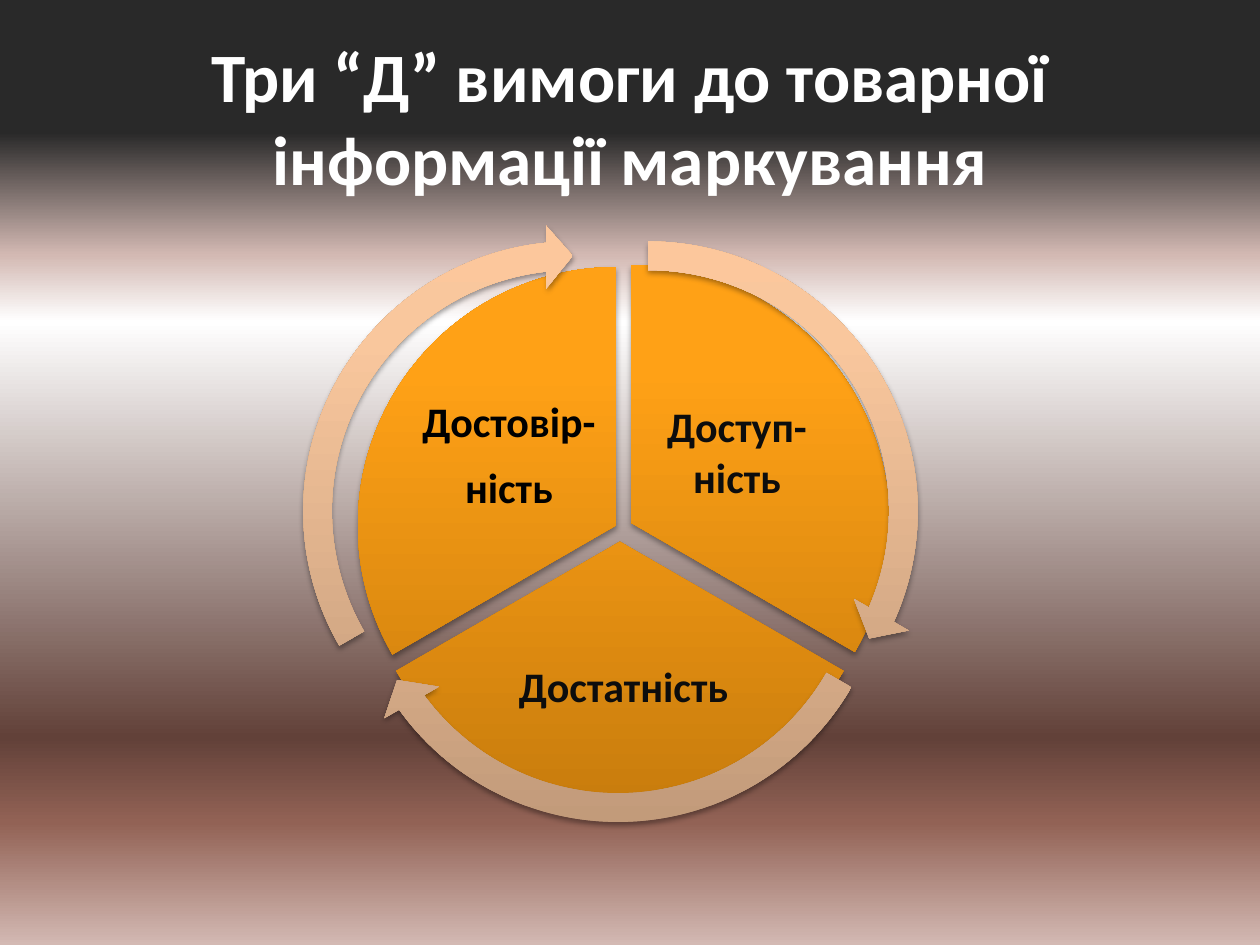
"""Build the slide with the three requirements for product marking."""
from dataclasses import dataclass

from lxml import etree
from pptx import Presentation, util as u
from pptx.dml.color import RGBColor
from pptx.enum import shapes, text
from pptx.oxml.ns import qn


@dataclass(frozen=True)
class Theme:
    font: str = "Calibri"
    head: float = 39.6
    body: float = 24
    white: str = "FFFFFF"
    ink: str = "0D0D0D"
    black: str = "000000"
    back: tuple = ((0, "D3B9B3"), (13, "926255"), (22, "624139"),
                   (66, "FFFFFF"), (73, "D3B9B3"), (86, "292929"))
    wedge: tuple = ((0, "C97D0D"), (80, "FFA116"), (100, "FFA217"))
    arrow: tuple = ((0, "C09979"), (80, "F9C79D"), (100, "FCC79C"))


THEME = Theme()
PIE = 4.1
RING = 4.55
FULL = 216
THIRD = FULL / 3
TOP = 162

WEDGES = [(2.96, 2.1), (2.87, 2.25), (2.84, 2.12)]
ARROWS = [
    (2.87, 1.78, 14.4, 161.994),
    (2.63, 2.11, 86.395, 18.005),
    (2.27, 1.78, 158.406, 90),
]
LABELS = [
    ((5.12, 2.97, 1.46, 1.22), ["Доступ-ність"], THEME.ink),
    ((3.85, 4.91, 2.2, 1.07), ["Достатність"], THEME.ink),
    ((3.31, 2.99, 1.46, 1.22), ["Достовір-", "ність"], THEME.black),
]


def put(item, **vals):
    """Set each named value on the item."""
    for name, val in vals.items():
        setattr(item, name, val)


def tint(node, color, alpha=None):
    """Add a colour, with an opacity in percent if given, to an XML node."""
    rgb = etree.SubElement(node, qn("a:srgbClr"), val=color)
    if alpha is not None:
        etree.SubElement(rgb, qn("a:alpha"), val=str(alpha * 1000))


def blend(fill, root, stops):
    """Fill with a gradient that runs from bottom to top."""
    fill.gradient()
    fill.gradient_angle = 90
    ramp = next(root.iter(qn("a:gsLst")))
    for old in list(ramp):
        ramp.remove(old)
    for spot, color in stops:
        tint(etree.SubElement(ramp, qn("a:gs"), pos=str(spot * 1000)), color)


def shade(shape):
    """Give the shape a soft shadow that falls straight down."""
    shape.shadow.inherit = False
    glow = etree.SubElement(
        next(shape.element.iter(qn("a:effectLst"))), qn("a:outerShdw"),
        blurRad=str(u.Pt(3.1)), dist=str(u.Pt(1.8)), dir="5400000", rotWithShape="0")
    tint(glow, THEME.black, 35)


def add_part(group, kind, left, top, size, turns, stops):
    """Add one round part of the cycle with its adjustments."""
    part = group.shapes.add_shape(
        kind, u.Inches(left), u.Inches(top), u.Inches(size), u.Inches(size))
    for i, turn in enumerate(turns):
        part.adjustments[i] = turn
    blend(part.fill, part.element, stops)
    part.line.fill.background()
    shade(part)


def write(frame, lines, size, color, gap=0):
    """Write bold centred lines into a text frame."""
    put(frame, word_wrap=True, auto_size=text.MSO_AUTO_SIZE.NONE,
        vertical_anchor=text.MSO_ANCHOR.MIDDLE)
    for i, line in enumerate(lines):
        para = frame.add_paragraph() if i else frame.paragraphs[0]
        put(para, alignment=text.PP_ALIGN.CENTER, space_after=u.Pt(gap))
        run = para.add_run()
        run.text = line
        put(run.font, name=THEME.font, size=u.Pt(size), bold=True)
        run.font.color.rgb = RGBColor.from_string(color)


def add_label(group, place, lines, color):
    """Add the words of one wedge."""
    frame = group.shapes.add_textbox(*map(u.Inches, place)).text_frame
    edge = u.Inches(0.03)
    put(frame, margin_left=edge, margin_right=edge, margin_top=edge, margin_bottom=edge)
    write(frame, lines, THEME.body, color, gap=0.35 * THEME.body)


def add_title(slide, words):
    """Place and format the title."""
    title = slide.shapes.title
    put(title, left=u.Inches(0.5), top=u.Inches(0.3),
        width=u.Inches(9), height=u.Inches(1.25))
    write(title.text_frame, [words], THEME.head, THEME.white)


def add_cycle(slide):
    """Add the wedges, the arrows round them and their labels."""
    group = slide.shapes.add_group_shape()
    for i, (left, top) in enumerate(WEDGES):
        turns = [(TOP + n * THIRD) % FULL for n in (i, i + 1)]
        add_part(group, shapes.MSO_SHAPE.PIE, left, top, PIE, turns, THEME.wedge)
    for left, top, end, start in ARROWS:
        turns = [0.05, 3.6, end, start, 0.055]
        add_part(group, shapes.MSO_SHAPE.CIRCULAR_ARROW, left, top, RING, turns, THEME.arrow)
    for label in LABELS:
        add_label(group, *label)


def main():
    """Build and save the slide."""
    deck = Presentation()
    put(deck, slide_width=u.Inches(10), slide_height=u.Inches(7.5))
    slide = deck.slides.add_slide(deck.slide_layouts[5])
    blend(slide.background.fill, slide.element, THEME.back)
    add_title(slide, "Три “Д” вимоги до товарної інформації маркування")
    add_cycle(slide)
    deck.save("out.pptx")


if __name__ == "__main__":
    main()
